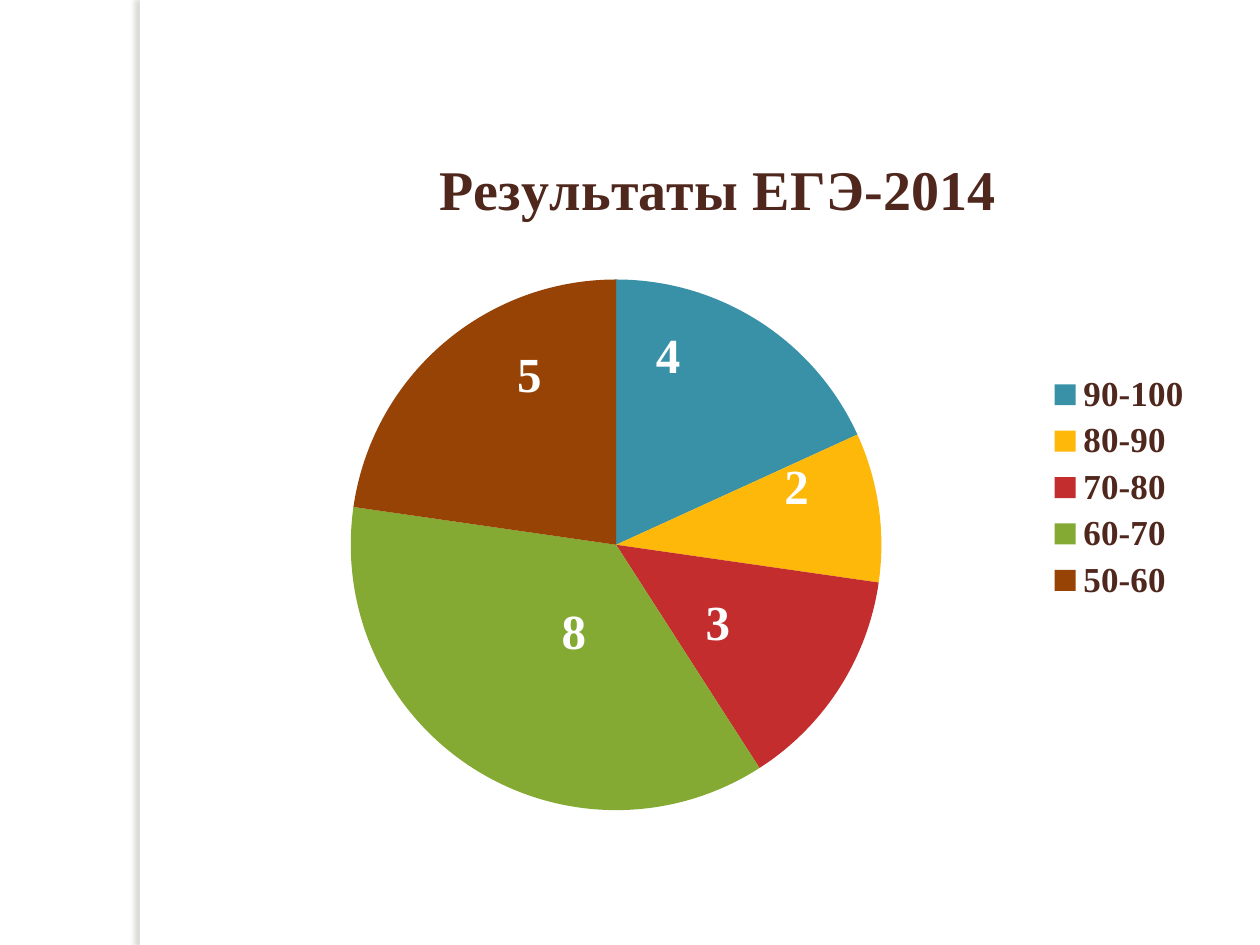
import pptx
import pptx.chart.data
import pptx.dml.color
import pptx.enum.chart
import pptx.enum.shapes
import pptx.oxml
import pptx.oxml.ns
import pptx.util

WHITE = pptx.dml.color.RGBColor(0xFF, 0xFF, 0xFF)
BROWN = pptx.dml.color.RGBColor(0x4F, 0x27, 0x1C)
BLACK = pptx.dml.color.RGBColor(0, 0, 0)
SLICE_COLORS = [pptx.dml.color.RGBColor.from_string(code) for code in
                ("3891A7", "FEB80A", "C32D2E", "84AA33", "964305")]
SERIF = "Times New Roman"
SCORES = {"90-100": 4, "80-90": 2, "70-80": 3, "60-70": 8, "50-60": 5}
# Label shifts from the slice centres, as shares of the chart
LABEL_SHIFTS = [(-0.02, -0.1), (0.05, -0.05), (-0.01, 0.01), (0.03, -0.03), (0, -0.09)]


def set_font(font, size, color, name=SERIF, bold=True):
    font.size = pptx.util.Pt(size)
    font.color.rgb = color
    font.name = name
    font.bold = bold


def manual_layout(**values):
    """Return a chart layout element; keywords keep the schema order."""
    parts = "".join(f'<c:{key} val="{value}"/>' for key, value in values.items())
    return pptx.oxml.parse_xml(
        f'<c:layout {pptx.oxml.ns.nsdecls("c")}>'
        f"<c:manualLayout>{parts}</c:manualLayout></c:layout>")


def replace_layout(parent, position, layout):
    for old in parent.findall(pptx.oxml.ns.qn("c:layout")):
        parent.remove(old)
    parent.insert(position, layout)


def add_side_strip(page, box):
    strip = page.shapes.add_shape(pptx.enum.shapes.MSO_SHAPE.RECTANGLE, *box)
    strip.fill.solid()
    strip.fill.fore_color.rgb = WHITE
    strip.line.fill.background()
    # Soft shadow falling to the left
    strip.element.spPr.append(pptx.oxml.parse_xml(
        f'<a:effectLst {pptx.oxml.ns.nsdecls("a")}>'
        '<a:outerShdw blurRad="38100" dist="38100" dir="10800000" rotWithShape="0">'
        '<a:srgbClr val="736F63"><a:alpha val="25000"/></a:srgbClr>'
        "</a:outerShdw></a:effectLst>"))


def add_results_chart(page, box):
    data = pptx.chart.data.CategoryChartData()
    data.categories = list(SCORES)
    data.add_series("Series 1", list(SCORES.values()))
    chart = page.shapes.add_chart(
        pptx.enum.chart.XL_CHART_TYPE.PIE, *box, data).chart
    set_font(chart.font, 10, BLACK, "Cabin", False)

    # Title
    chart.has_title = True
    span = chart.chart_title.text_frame.paragraphs[0].add_run()
    span.text = "Результаты ЕГЭ-2014"
    set_font(span.font, 32, BROWN)
    chart.chart_title.include_in_layout = False
    title = chart.chart_title._element
    replace_layout(title, 1, manual_layout(
        xMode="edge", yMode="edge", x=0.21, y=0.05))

    # Legend
    chart.has_legend = True
    chart.legend.position = pptx.enum.chart.XL_LEGEND_POSITION.RIGHT
    chart.legend.include_in_layout = False
    set_font(chart.legend.font, 20, BROWN)

    # Pie area
    plot = chart.plots[0]
    plot.vary_by_categories = True
    replace_layout(plot._element.getparent(), 0, manual_layout(
        layoutTarget="inner", xMode="edge", yMode="edge",
        x=0.13, y=0.22, w=0.54, h=0.71))
    plot.has_data_labels = True
    plot.data_labels.show_value = True
    plot.data_labels.show_percentage = False
    set_font(plot.data_labels.font, 28, WHITE)

    # Slices and their labels
    points = plot.series[0].points
    for index, (color, (dx, dy)) in enumerate(zip(SLICE_COLORS, LABEL_SHIFTS)):
        point = points[index]
        point.format.fill.solid()
        point.format.fill.fore_color.rgb = color
        label = point.data_label
        set_font(label.font, 28, WHITE)
        label.position = pptx.enum.chart.XL_LABEL_POSITION.CENTER
    series_labels = plot.series[0].data_labels
    series_labels.show_value = True
    set_font(series_labels.font, 28, WHITE)
    label_tags = series_labels._element.findall(pptx.oxml.ns.qn("c:dLbl"))
    for tag, (dx, dy) in zip(label_tags, LABEL_SHIFTS):
        replace_layout(tag, 1, manual_layout(x=dx, y=dy))


def main():
    deck = pptx.Presentation()
    deck.slide_width = pptx.util.Inches(10)
    deck.slide_height = pptx.util.Inches(7.5)
    page = deck.slides.add_slide(deck.slide_layouts[6])
    page.background.fill.solid()
    page.background.fill.fore_color.rgb = WHITE

    def area(left, top, width, height):
        return [pptx.util.Inches(value) for value in (left, top, width, height)]

    add_side_strip(page, area(1.11, 0, 0.08, 7.5))
    add_results_chart(page, area(1.77, 0.84, 7.8, 6.06))
    deck.save("out.pptx")


if __name__ == "__main__":
    main()
